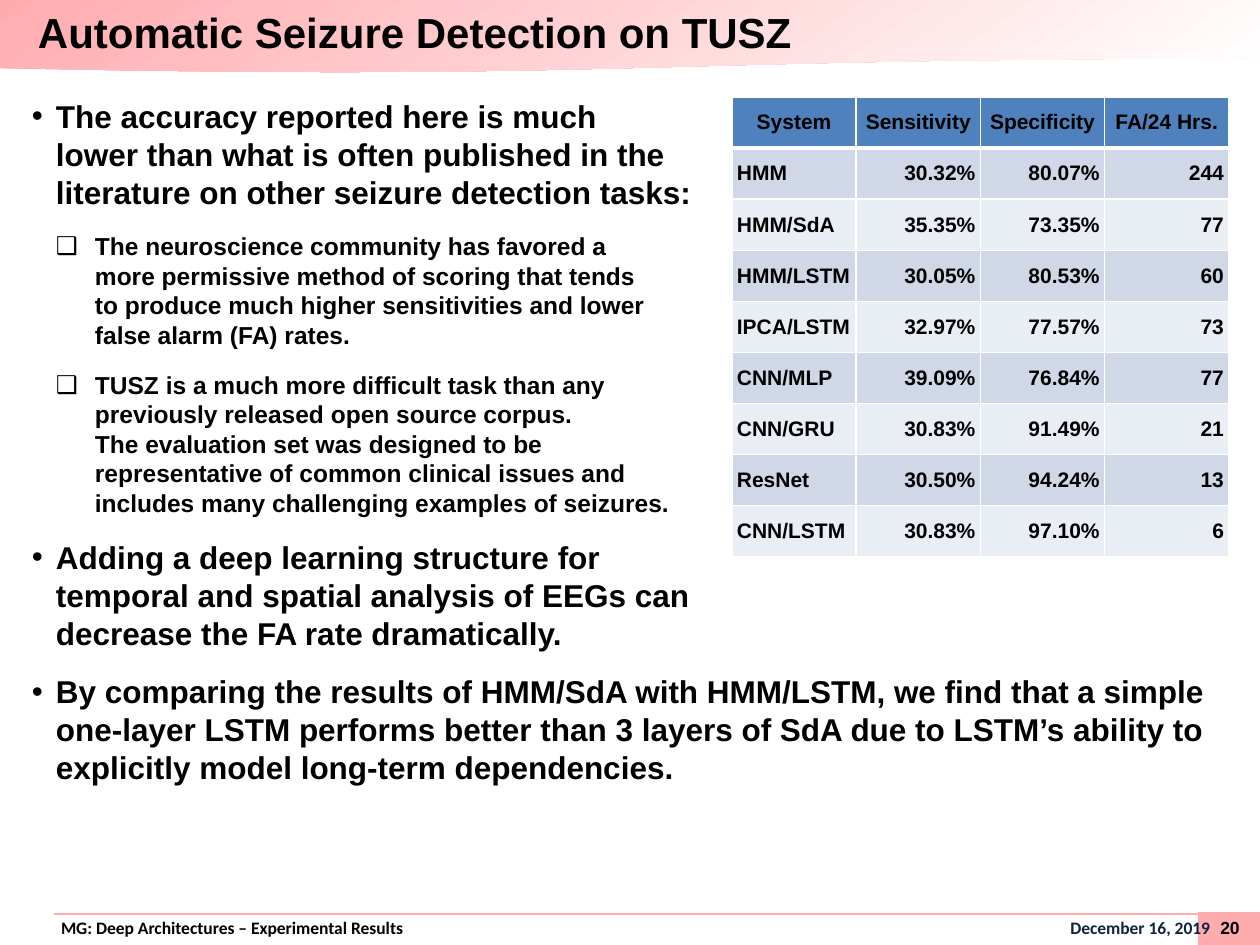
from copy import deepcopy

from lxml import etree
from pptx import Presentation
from pptx.dml.color import RGBColor
from pptx.enum.shapes import MSO_CONNECTOR, MSO_SHAPE
from pptx.enum.text import MSO_ANCHOR as Anchor, PP_ALIGN as Align
from pptx.oxml.ns import qn
from pptx.util import Pt

EMU_PER_PX = 914400 / 126
PINK, WHITE, BLACK, NAVY = "FFACAF", "FFFFFF", "000000", "0F243E"
HEADER_BLUE, BAND_DARK, BAND_LIGHT = "4F81BD", "D0D8E8", "E9EDF4"

BULLETS = [
    (1, "The accuracy reported here is much\nlower than what is often published in the\n"
        "literature on other seizure detection tasks:"),
    (2, "The neuroscience community has favored a\nmore permissive method of scoring that tends\n"
        "to produce much higher sensitivities and lower\nfalse alarm (FA) rates."),
    (2, "TUSZ is a much more difficult task than any\npreviously released open source corpus.\n"
        "The evaluation set was designed to be\nrepresentative of common clinical issues and\n"
        "includes many challenging examples of seizures."),
    (1, "Adding a deep learning structure for\ntemporal and spatial analysis of EEGs can\n"
        "decrease the FA rate dramatically."),
    (1, "By comparing the results of HMM/SdA with HMM/LSTM, we find that a simple one-layer LSTM "
        "performs better than 3 layers of SdA due to LSTM’s ability to explicitly model "
        "long-term dependencies."),
]
LEVELS = {
    1: {"mark": "•", "margin": 24, "hang": 24, "size": 18},
    2: {"mark": "❑", "margin": 63, "hang": 39, "size": 14},
}
RESULTS = [
    ("System", "Sensitivity", "Specificity", "FA/24 Hrs."),
    ("HMM", "30.32%", "80.07%", "244"),
    ("HMM/SdA", "35.35%", "73.35%", "77"),
    ("HMM/LSTM", "30.05%", "80.53%", "60"),
    ("IPCA/LSTM", "32.97%", "77.57%", "73"),
    ("CNN/MLP", "39.09%", "76.84%", "77"),
    ("CNN/GRU", "30.83%", "91.49%", "21"),
    ("ResNet", "30.50%", "94.24%", "13"),
    ("CNN/LSTM", "30.83%", "97.10%", "6"),
]


def px(length):
    return round(length * EMU_PER_PX)


def color(hex_code):
    return RGBColor.from_string(hex_code)


def set_all(target, values):
    for name, value in values.items():
        setattr(target, name, value)


def add_span(para, text, size, name="Arial", ink=BLACK):
    span = para.add_run()
    span.text = text
    style_span(span, size, name, ink)


def style_span(span, size, name="Arial", ink=BLACK):
    set_all(span.font, {"size": Pt(size), "name": name, "bold": True})
    span.font.color.rgb = color(ink)


def add_text_box(page, box, left_inset=0, anchor=Anchor.TOP):
    frame = page.shapes.add_textbox(*map(px, box)).text_frame
    set_all(frame, {"word_wrap": True, "vertical_anchor": anchor, "margin_left": px(left_inset),
                    "margin_top": 0, "margin_right": 0, "margin_bottom": 0})
    return frame


def add_block(page, kind, box):
    block = page.shapes.add_shape(kind, *map(px, box))
    block.shadow.inherit = False
    block.line.fill.background()
    return block


def add_title_band(page, box):
    left, top, width, height = box
    fill = add_block(page, MSO_SHAPE.FLOWCHART_DOCUMENT, box).fill
    fill.gradient()
    fill.gradient_angle = 305
    for stop, hex_code in zip(fill.gradient_stops, (PINK, WHITE)):
        stop.color.rgb = color(hex_code)
    frame = add_text_box(page, (left, top, width, height - 10), 38, Anchor.MIDDLE)
    add_span(frame.paragraphs[0], "Automatic Seizure Detection on TUSZ", 24)


def add_footer(page, box):
    left, top, width, height = box
    right = left + width
    corner = add_block(page, MSO_SHAPE.RECTANGLE, (right - 62, top + 1, 62, height - 1))
    corner.fill.solid()
    corner.fill.fore_color.rgb = color(PINK)

    rule = page.shapes.add_connector(MSO_CONNECTOR.STRAIGHT, px(left + 54), px(top + 3),
                                     px(right), px(top + 3))
    rule.line.color.rgb = color(PINK)
    rule.line.width = Pt(1.5)
    etree.SubElement(rule._element.spPr, qn("a:effectLst"))

    labels = (
        ("MG: Deep Architectures – Experimental Results", left + 61, 600, Align.LEFT,
         "Calibri", BLACK),
        ("December 16, 2019", right - 350, 300, Align.RIGHT, "Calibri", NAVY),
        ("20", right - 55, 50, Align.CENTER, "Arial", BLACK),
    )
    for text, label_left, label_width, align, font_name, ink in labels:
        frame = add_text_box(page, (label_left, top + 6, label_width, 21), anchor=Anchor.MIDDLE)
        para = frame.paragraphs[0]
        para.alignment = align
        add_span(para, text, 10, font_name, ink)


def add_bullets(page, box):
    frame = add_text_box(page, box)
    for index, (level, text) in enumerate(BULLETS):
        look = LEVELS[level]
        para = frame.add_paragraph() if index else frame.paragraphs[0]
        para.text = text.replace("\n", "\v")
        set_all(para, {"level": level - 1, "space_after": Pt(12), "line_spacing": 1.0})
        props = para._p.get_or_add_pPr()
        props.set("marL", str(px(look["margin"])))
        props.set("indent", str(-px(look["hang"])))
        etree.SubElement(props, qn("a:buFont"), typeface="Arial")
        etree.SubElement(props, qn("a:buChar"), char=look["mark"])
        for span in para.runs:
            style_span(span, look["size"])
        for line_break in para._p.findall(qn("a:br")):
            line_break.append(deepcopy(para.runs[0]._r.rPr))


def set_borders(cell, widths):
    """Draw white borders of the given widths in points, keyed by side L, R, T, B."""
    props = cell._tc.get_or_add_tcPr()
    for index, (side, width) in enumerate(widths.items()):
        line = etree.Element(qn(f"a:ln{side}"), w=str(Pt(width)))
        fill = etree.SubElement(line, qn("a:solidFill"))
        etree.SubElement(fill, qn("a:srgbClr"), val=WHITE)
        props.insert(index, line)


def add_results_table(page, box):
    row_count, column_count = len(RESULTS), len(RESULTS[0])
    table = page.shapes.add_table(row_count, column_count, *map(px, box)).table
    for column in table.columns:
        column.width = px(box[2] / column_count)
    for row_index, record in enumerate(RESULTS):
        table.rows[row_index].height = px(box[3] / row_count)
        band = BAND_DARK if row_index % 2 else BAND_LIGHT
        for column_index, text in enumerate(record):
            cell = table.cell(row_index, column_index)
            set_all(cell, {"vertical_anchor": Anchor.MIDDLE, "margin_left": px(5),
                           "margin_right": px(5), "margin_top": px(3), "margin_bottom": px(3)})
            cell.fill.solid()
            cell.fill.fore_color.rgb = color(band if row_index else HEADER_BLUE)
            set_borders(cell, {"L": 1, "R": 1, "T": 3 if row_index == 1 else 1,
                               "B": 1 if row_index else 3})
            para = cell.text_frame.paragraphs[0]
            body_align = Align.RIGHT if column_index else Align.LEFT
            para.alignment = body_align if row_index else Align.CENTER
            add_span(para, text, 12)


def main():
    deck = Presentation()
    set_all(deck, {"slide_width": px(1260), "slide_height": px(945)})
    page = deck.slides.add_slide(deck.slide_layouts[6])
    add_title_band(page, (0, 0, 1261, 73))
    add_footer(page, (0, 911, 1260, 34))
    add_bullets(page, (32, 97, 1197, 789))
    add_results_table(page, (732, 97, 497, 460))
    deck.save("out.pptx")


if __name__ == "__main__":
    main()
